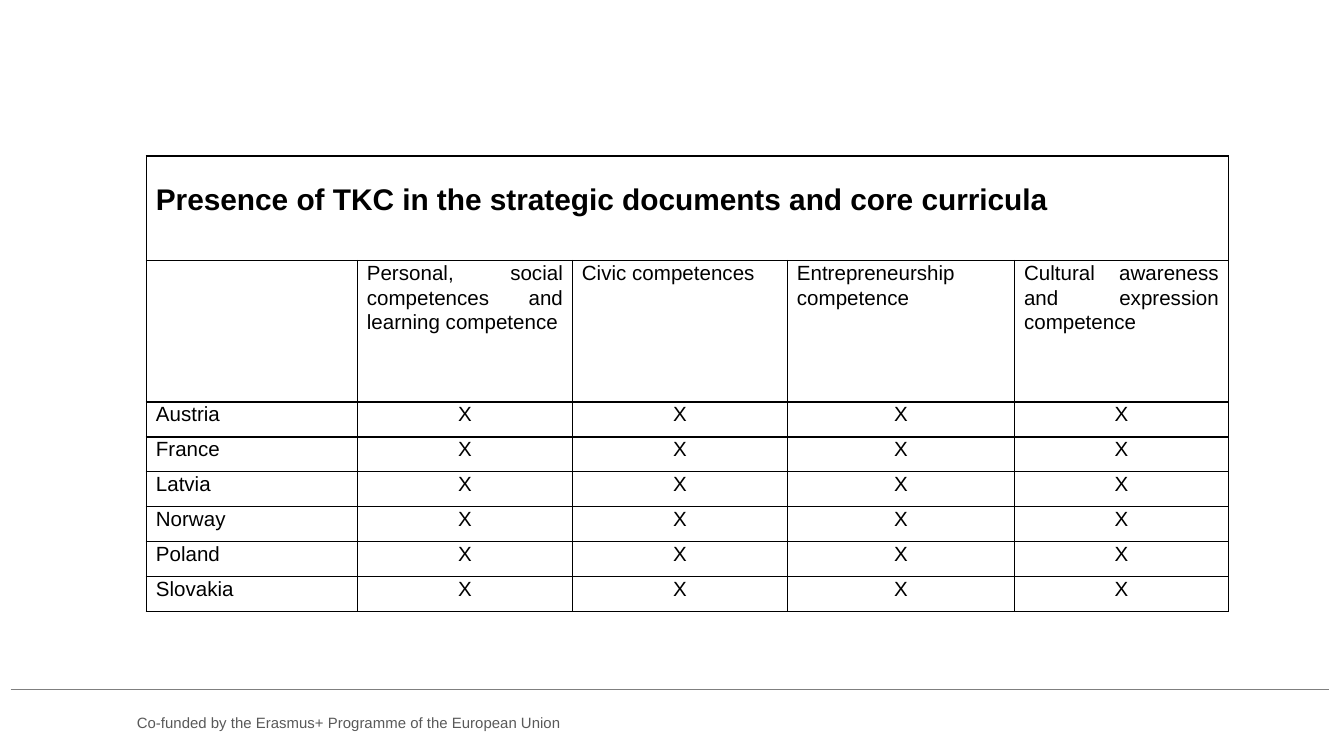
"""Build a slide with a table of key competences by country."""
from pptx import Presentation
from pptx.dml.color import RGBColor
from pptx.enum import shapes, text
from pptx.oxml import parse_xml
from pptx.oxml.ns import nsdecls
from pptx.util import Inches, Pt

BLACK = RGBColor(0x00, 0x00, 0x00)
GREY = RGBColor(0x7F, 0x7F, 0x7F)
FOOTER_GREY = RGBColor(0x59, 0x59, 0x59)
JUSTIFY = text.PP_ALIGN.JUSTIFY
CENTER = text.PP_ALIGN.CENTER

TITLE = "Presence of TKC in the strategic documents and core curricula"
COMPETENCES = [
    "Personal, social competences and learning competence",
    "Civic competences",
    "Entrepreneurship competence",
    "Cultural awareness and expression competence",
]
COUNTRIES = ["Austria", "France", "Latvia", "Norway", "Poland", "Slovakia"]
COLUMN_WIDTHS = [1.57, 1.6, 1.6, 1.69, 1.59]
ROW_HEIGHTS = [0.78, 1.05] + [0.26] * len(COUNTRIES)


def write(para, words, align, **font):
    para.text = words
    para.alignment = align
    for name, value in {"name": "Arial", **font}.items():
        setattr(para.font, name, value)


def format_cell(cell):
    properties = cell._tc.get_or_add_tcPr()
    for side in ("lnL", "lnR", "lnT", "lnB"):
        properties.append(parse_xml(
            f'<a:{side} {nsdecls("a")} w="{Pt(1)}"><a:solidFill>'
            f'<a:srgbClr val="{BLACK}"/></a:solidFill></a:{side}>'))
    cell.fill.background()
    margins = {"margin_left": 0.07, "margin_top": 0, "margin_right": 0.07, "margin_bottom": 0}
    for name, value in margins.items():
        setattr(cell, name, Inches(value))


deck = Presentation()
deck.slide_width = Inches(10)
deck.slide_height = Inches(10) * 9 // 16
page = deck.slides.add_slide(deck.slide_layouts[6])

rule = page.shapes.add_connector(
    shapes.MSO_CONNECTOR.STRAIGHT, Inches(0.08), Inches(5.13), Inches(9.89), Inches(5.13))
rule.line.color.rgb = GREY
rule.line.width = Pt(0.25)
rule._element.spPr.append(parse_xml(f'<a:effectLst {nsdecls("a")}/>'))

footer = page.shapes.add_textbox(Inches(0.92), Inches(5.26), Inches(4.37), Inches(0.24))
footer.text_frame.word_wrap = True
write(footer.text_frame.paragraphs[0], "Co-funded by the Erasmus+ Programme of the European Union",
      text.PP_ALIGN.LEFT, size=Pt(8))
footer.text_frame.paragraphs[0].font.color.rgb = FOOTER_GREY

table = page.shapes.add_table(
    len(ROW_HEIGHTS), len(COLUMN_WIDTHS), Inches(1.09), Inches(1.16),
    Inches(sum(COLUMN_WIDTHS)), Inches(sum(ROW_HEIGHTS))).table
table.first_row = table.horz_banding = False
for column, width in zip(table.columns, COLUMN_WIDTHS):
    column.width = Inches(width)
for row, height in zip(table.rows, ROW_HEIGHTS):
    row.height = Inches(height)

contents = [[TITLE, "", "", "", ""], ["", *COMPETENCES]]
contents += [[country] + ["X"] * len(COMPETENCES) for country in COUNTRIES]
for row, words_in_row in zip(table.rows, contents):
    for cell, words in zip(row.cells, words_in_row):
        format_cell(cell)
        para = cell.text_frame.paragraphs[0]
        write(para, words, CENTER if words == "X" else JUSTIFY, size=Pt(11), bold=False)
        para.font.color.rgb = BLACK
        para.line_spacing = 1.07

title_cell = table.cell(0, 0)
title_cell.merge(table.cell(0, len(COMPETENCES)))
title_cell.margin_top = Inches(0.19)
title_font = title_cell.text_frame.paragraphs[0].font
title_font.size = Pt(16)
title_font.bold = True

deck.save("out.pptx")
